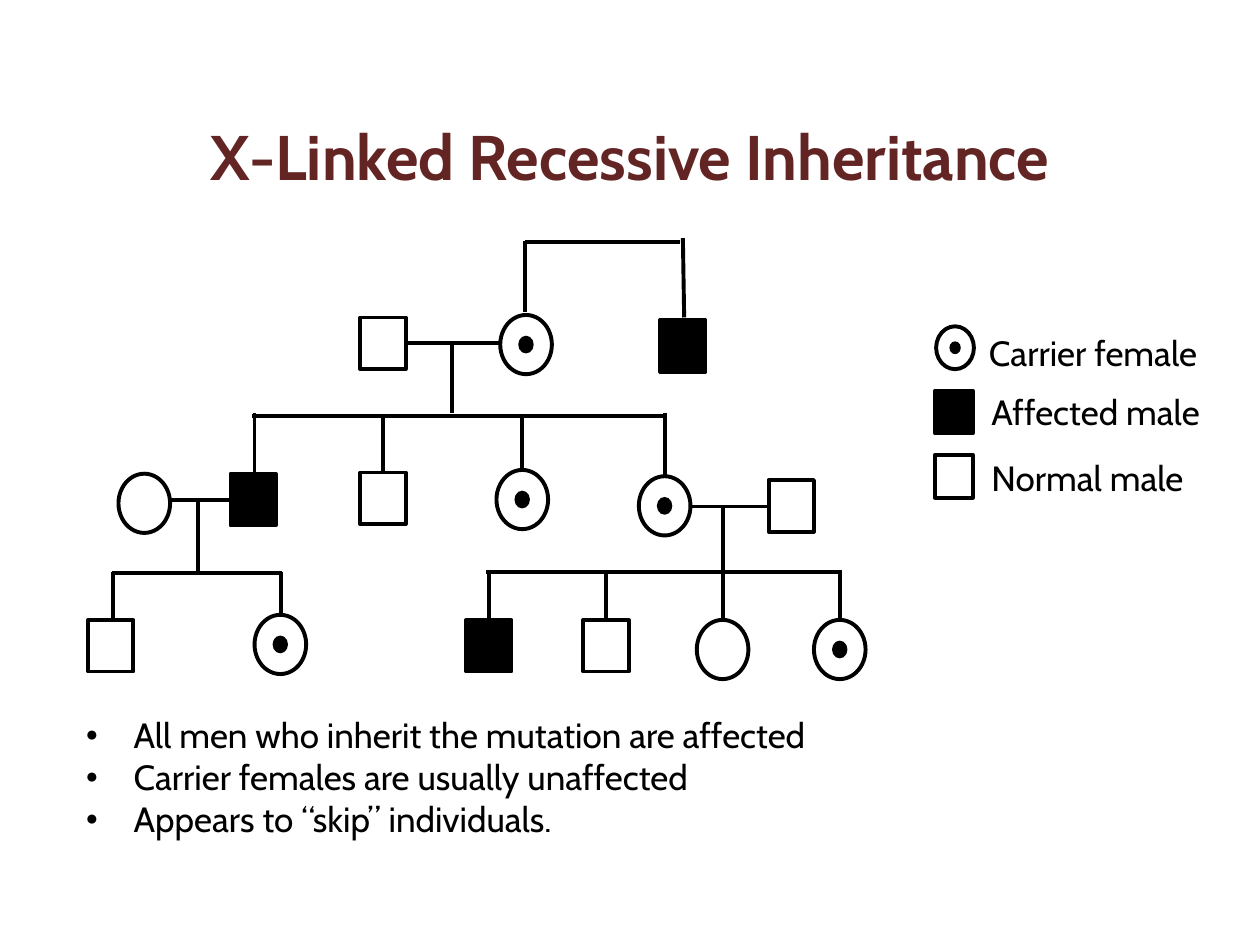
import pptx
import pptx.util
import pptx.dml.color
import pptx.enum.shapes
import pptx.enum.text
import pptx.oxml.ns
import lxml.etree

Inches = pptx.util.Inches
SHAPE = pptx.enum.shapes.MSO_SHAPE
COLORS = {"title": "632523", "ink": "000000"}
FONT = "Cabin"
MALE_SIZE = (0.36, 0.41)
FEMALE_SIZE = (0.41, 0.47)
LEGEND_SIZE = (0.3, 0.34)
DOT_RATIO = 0.3

NORMAL_MALES = [(2.86, 2.52), (2.86, 3.75), (0.7, 4.92), (6.1, 3.81), (4.63, 4.92)]
AFFECTED_MALES = [(5.24, 2.54), (1.83, 3.76), (3.7, 4.92)]
NORMAL_FEMALES = [(0.94, 3.76), (5.53, 4.92)]
CARRIER_FEMALES = [(3.97, 2.5), (3.94, 3.73), (5.07, 3.78), (2.02, 4.88), (6.46, 4.92)]

MARRIAGES = [(3.22, 3.96, 2.72), (1.36, 1.83, 3.97), (5.49, 6.1, 4.02)]
SIBLING_BARS = [(4.17, 5.4, 1.92), (2, 5.28, 3.3), (0.89, 2.24, 4.55), (3.86, 6.68, 4.54)]
DESCENTS = [
    (4.17, 1.91, 2.48),
    (3.59, 2.72, 3.28), (2.02, 3.28, 3.77), (3.04, 3.31, 3.76),
    (4.14, 3.29, 3.73), (5.28, 3.28, 3.77),
    (1.57, 3.97, 4.56), (0.9, 4.54, 4.92), (2.23, 4.54, 4.89),
    (5.74, 4.02, 4.92), (3.88, 4.54, 5.01), (4.81, 4.54, 4.91), (6.67, 4.54, 4.93),
]
LEGEND_LABELS = [
    ("Carrier female", 7.75, 2.58, 1.88),
    ("Affected male", 7.77, 3.05, 1.9),
    ("Normal male", 7.77, 3.57, 1.78),
]
POINTS = [
    "All men who inherit the mutation are affected",
    "Carrier females are usually unaffected",
    "Appears to “skip” individuals.",
]


def color(name):
    return pptx.dml.color.RGBColor.from_string(COLORS[name])


def place(shape, left, top, width, height):
    shape.left, shape.top = Inches(left), Inches(top)
    shape.width, shape.height = Inches(width), Inches(height)


def format_text(para, size, color_name, bold=False):
    for span in para.runs:
        span.font.name = FONT
        span.font.size = pptx.util.Pt(size)
        span.font.bold = bold
        span.font.color.rgb = color(color_name)


def add_symbol(group, kind, position, size, filled=False, outlined=True):
    shape = group.shapes.add_shape(kind, *map(Inches, (*position, *size)))
    shape.shadow.inherit = False
    if filled:
        shape.fill.solid()
        shape.fill.fore_color.rgb = color("ink")
    else:
        shape.fill.background()
    if outlined:
        shape.line.color.rgb = color("ink")
        shape.line.width = pptx.util.Pt(2.25)
    else:
        shape.line.fill.background()


def add_carrier(group, position, size):
    add_symbol(group, SHAPE.OVAL, position, size)
    dot_size = [length * DOT_RATIO for length in size]
    dot_position = [start + (length - dot) / 2
                    for start, length, dot in zip(position, size, dot_size)]
    add_symbol(group, SHAPE.OVAL, dot_position, dot_size, filled=True, outlined=False)


def add_line(group, *ends):
    line = group.shapes.add_connector(
        pptx.enum.shapes.MSO_CONNECTOR.STRAIGHT, *map(Inches, ends))
    line.line.color.rgb = color("ink")
    line.line.width = pptx.util.Pt(2.25)
    properties = line._element.spPr
    lxml.etree.SubElement(properties, pptx.oxml.ns.qn("a:effectLst"))


def add_label(group, text, left, top, width):
    box = group.shapes.add_textbox(*map(Inches, (left, top, width, 0.43)))
    box.text_frame.word_wrap = False
    box.text_frame.text = text
    format_text(box.text_frame.paragraphs[0], 20, "ink")


def set_bullet(para):
    properties = para._p.get_or_add_pPr()
    properties.set("marL", str(Inches(0.38)))
    properties.set("indent", str(-Inches(0.38)))
    for tag, name, value in (("a:buSzPct", "val", "60000"), ("a:buChar", "char", "●")):
        lxml.etree.SubElement(properties, pptx.oxml.ns.qn(tag)).set(name, value)


def fill_title(title):
    place(title, 0.31, 0.91, 9.38, 0.65)
    frame = title.text_frame
    frame.text = "X-Linked Recessive Inheritance"
    frame.auto_size = pptx.enum.text.MSO_AUTO_SIZE.NONE
    frame.vertical_anchor = pptx.enum.text.MSO_ANCHOR.MIDDLE
    frame.paragraphs[0].alignment = pptx.enum.text.PP_ALIGN.CENTER
    format_text(frame.paragraphs[0], 36, "title", bold=True)


def fill_body(body):
    place(body, 0.58, 5.61, 8.56, 1.11)
    frame = body.text_frame
    frame.text = "\n".join(POINTS)
    frame.auto_size = pptx.enum.text.MSO_AUTO_SIZE.NONE
    for para in frame.paragraphs:
        para.space_before = pptx.util.Pt(0)
        set_bullet(para)
        format_text(para, 20, "ink")


def add_legend(slide):
    group = slide.shapes.add_group_shape()
    add_carrier(group, (7.43, 2.59), LEGEND_SIZE)
    add_symbol(group, SHAPE.RECTANGLE, (7.42, 3.1), LEGEND_SIZE, filled=True)
    add_symbol(group, SHAPE.RECTANGLE, (7.42, 3.61), LEGEND_SIZE)
    for label in LEGEND_LABELS:
        add_label(group, *label)


def add_pedigree(slide):
    group = slide.shapes.add_group_shape()
    for start, end, level in MARRIAGES + SIBLING_BARS:
        add_line(group, start, level, end, level)
    for across, top, bottom in DESCENTS:
        add_line(group, across, top, across, bottom)
    add_line(group, 5.42, 1.89, 5.43, 2.52)
    for position in NORMAL_MALES:
        add_symbol(group, SHAPE.RECTANGLE, position, MALE_SIZE)
    for position in AFFECTED_MALES:
        add_symbol(group, SHAPE.RECTANGLE, position, MALE_SIZE, filled=True)
    for position in NORMAL_FEMALES:
        add_symbol(group, SHAPE.OVAL, position, FEMALE_SIZE)
    for position in CARRIER_FEMALES:
        add_carrier(group, position, FEMALE_SIZE)


def main():
    deck = pptx.Presentation()
    deck.slide_width, deck.slide_height = Inches(10), Inches(7.5)
    page = deck.slides.add_slide(deck.slide_layouts[1])
    fill_title(page.shapes.title)
    fill_body(page.placeholders[1])
    add_legend(page)
    add_pedigree(page)
    deck.save("out.pptx")


if __name__ == "__main__":
    main()
